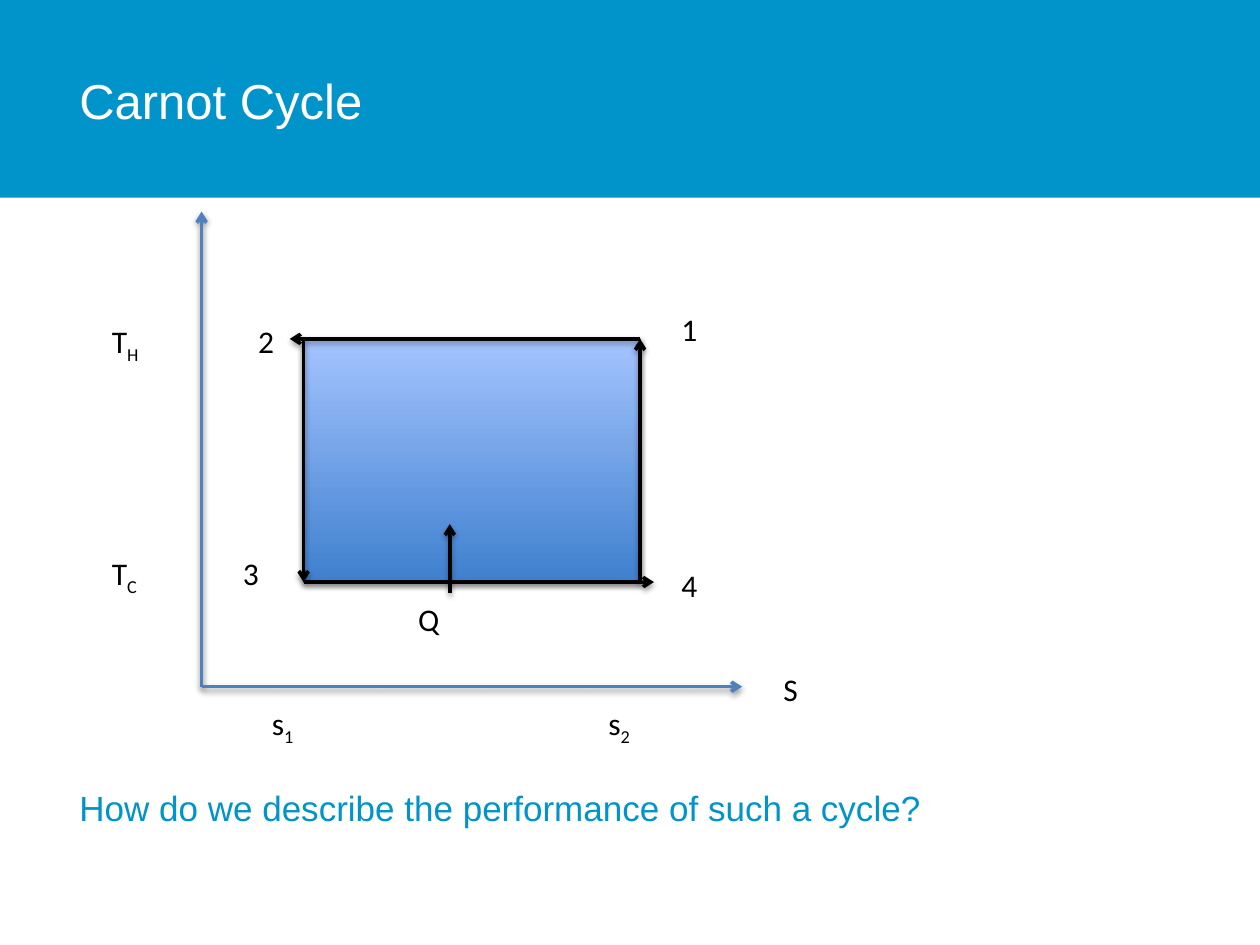
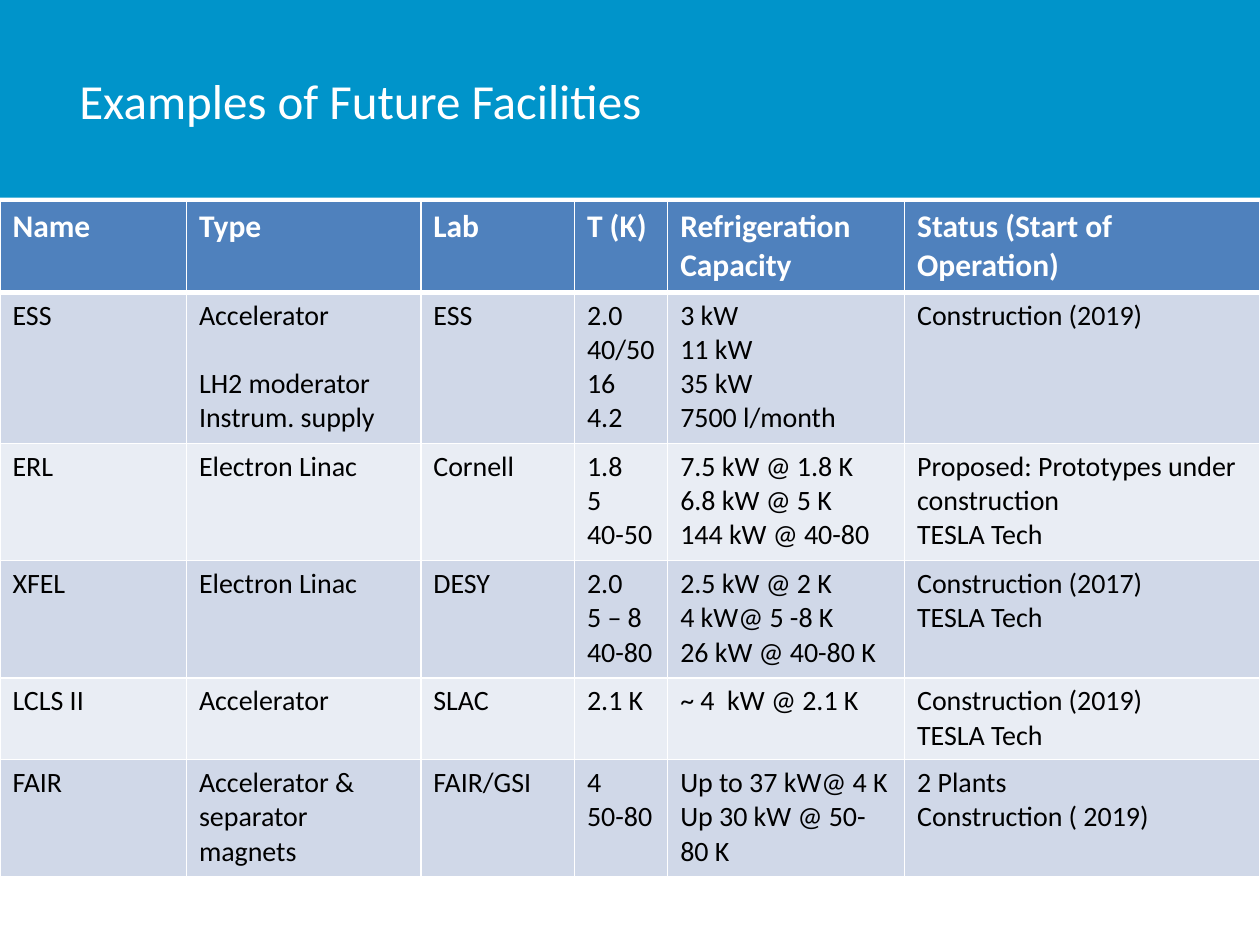
"""Build two slides: the Carnot cycle and a table of future facilities."""
from lxml.etree import SubElement
from pptx import Presentation
from pptx.dml.color import RGBColor
from pptx.enum.shapes import MSO_CONNECTOR, MSO_SHAPE
from pptx.enum.text import MSO_ANCHOR, MSO_AUTO_SIZE, PP_ALIGN
from pptx.oxml.ns import qn
from pptx.util import Inches, Pt

BLUE, STEEL, WHITE, BLACK = "0094CA", "4F81BD", "FFFFFF", "000000"
BANDS = ["E9EDF4", "D0D8E8"]
BARE = dict(margin_left=0, margin_right=0, margin_top=0, margin_bottom=0,
            word_wrap=True, auto_size=MSO_AUTO_SIZE.NONE)


def paint(fill, tone):
    """Fill with one solid colour."""
    fill.solid()
    fill.fore_color.rgb = RGBColor.from_string(tone)


def write(frame, text, tone, **style):
    """Write lines of text; an underscore starts a subscript."""
    for num, line in enumerate(text.split("\n")):
        para = frame.add_paragraph() if num else frame.paragraphs[0]
        para.alignment = PP_ALIGN.LEFT
        base, _, sub = line.partition("_")
        for part in filter(None, (base, sub)):
            run = para.add_run()
            run.text = part
            for key, val in style.items():
                setattr(run.font, key, val)
            paint(run.font.fill, tone)
        if sub:
            run.font._element.set("baseline", "-25000")


deck = Presentation()
deck.slide_width, deck.slide_height = Inches(10), Inches(7.5)
plan = deck.slide_layouts[5]
slides = []
for text, face in [("Carnot Cycle", "Arial"), ("Examples of Future Facilities", "Calibri")]:
    slide = deck.slides.add_slide(plan)
    title = slide.shapes.title
    title.left, title.top, title.width, title.height = map(Inches, (0.63, 0, 6.64, 1.58))
    for key, val in (BARE | dict(vertical_anchor=MSO_ANCHOR.MIDDLE)).items():
        setattr(title.text_frame, key, val)
    write(title.text_frame, text, WHITE, name=face, size=Pt(28))
    slides.append(slide)
cycle, sites = slides

band = cycle.shapes.add_shape(MSO_SHAPE.RECTANGLE, 0, 0, Inches(10), Inches(1.57))
band.shadow.inherit = False
paint(band.fill, BLUE)
band.line.fill.background()
plan.shapes.element.insert(2, band.element)

ask = cycle.shapes.add_textbox(*map(Inches, (0.63, 6.24, 8.54, 0.53))).text_frame
for key, val in BARE.items():
    setattr(ask, key, val)
write(ask, "How do we describe the performance of such a cycle?", BLUE, name="Arial", size=Pt(20))
ask.paragraphs[0].line_spacing = Pt(24)
ask.paragraphs[0].space_after = Pt(12)

left, right, top, base = 2.41, 5.08, 2.69, 4.62
work = cycle.shapes.add_shape(MSO_SHAPE.RECTANGLE,
                              *map(Inches, (left, top, right - left, base - top)))
work.fill.gradient()
work.fill.gradient_angle = 90
for stop, tone in zip(work.fill.gradient_stops, ("3F80CE", "A4C4FF")):
    stop.color.rgb = RGBColor.from_string(tone)
paint(work.line.fill, "4B7EBC")
work.line.width = Pt(0.75)

cast = [work]
for tone, *ends in [
    (STEEL, 1.6, 5.45, 1.6, 1.68),
    (STEEL, 1.6, 5.45, 5.89, 5.45),
    (BLACK, right, top, 2.3, top),
    (BLACK, left, top, left, base),
    (BLACK, left, base, 5.19, base),
    (BLACK, right, base, right, top),
    (BLACK, 3.57, 4.71, 3.57, 4.16),
]:
    arrow = cycle.shapes.add_connector(MSO_CONNECTOR.STRAIGHT, *map(Inches, ends))
    paint(arrow.line.fill, tone)
    arrow.line.width = Pt(2)
    SubElement(arrow.line._get_or_add_ln(), qn("a:tailEnd"), type="arrow")
    cast.append(arrow)

for shape in cast:
    glow = SubElement(shape.element.spPr, qn("a:effectLst"))
    shade = SubElement(glow, qn("a:outerShdw"), blurRad="40000", dist="20000",
                       dir="5400000", rotWithShape="0")
    ink = SubElement(shade, qn("a:srgbClr"), val=BLACK)
    SubElement(ink, qn("a:alpha"), val="38000")

for text, x, y in [
    ("S", 6.12, 5.27), ("1", 5.31, 2.41), ("2", 1.95, 2.51), ("3", 1.83, 4.35),
    ("4", 5.31, 4.44), ("T_H", 0.79, 2.51), ("T_C", 0.79, 4.35),
    ("Q", 3.22, 4.71), ("s_1", 2.06, 5.54), ("s_2", 4.73, 5.54),
]:
    label = cycle.shapes.add_textbox(*map(Inches, (x, y, 0.6, 0.45))).text_frame
    label.word_wrap = True
    write(label, text, BLACK, name="Calibri", size=Pt(18))

rows = [
    ["Name", "Type", "Lab", "T (K)", "Refrigeration Capacity", "Status (Start of Operation)"],
    ["ESS", "Accelerator\nLH2 moderator\nInstrum. supply", "ESS", "2.0\n40/50\n16\n4.2",
     "3 kW\n11 kW\n35 kW\n7500 l/month", "Construction (2019)"],
    ["ERL", "Electron Linac", "Cornell", "1.8\n5\n40-50",
     "7.5 kW @ 1.8 K\n6.8 kW @ 5 K\n144 kW @ 40-80",
     "Proposed: Prototypes under construction\nTESLA Tech"],
    ["XFEL", "Electron Linac", "DESY", "2.0\n5 – 8\n40-80",
     "2.5 kW @ 2 K\n4 kW@ 5 -8 K\n26 kW @ 40-80 K", "Construction (2017)\nTESLA Tech"],
    ["LCLS II", "Accelerator", "SLAC", "2.1 K", "~ 4  kW @ 2.1 K",
     "Construction (2019)\nTESLA Tech"],
    ["FAIR", "Accelerator & separator magnets", "FAIR/GSI", "4\n50-80",
     "Up to 37 kW@ 4 K\nUp 30 kW @ 50- 80 K", "2 Plants\nConstruction ( 2019)"],
]
grid = sites.shapes.add_table(6, 6, *map(Inches, (0, 1.6, 10, 5.36))).table
for col, wide in zip(grid.columns, (1.48, 1.86, 1.22, 0.74, 1.88, 2.82)):
    col.width = Inches(wide)
for row, high in zip(grid.rows, (0.72, 1.2, 0.93, 0.93, 0.65, 0.93)):
    row.height = Inches(high)
for r, row in enumerate(rows):
    head = r == 0
    for c, text in enumerate(row):
        cell = grid.cell(r, c)
        for side in "LRTB":
            thick = (r, side) in [(0, "B"), (1, "T")]
            edge = SubElement(cell._tc.get_or_add_tcPr(), qn("a:ln" + side),
                              w=str(Pt(3 if thick else 1)))
            SubElement(SubElement(edge, qn("a:solidFill")), qn("a:srgbClr"), val=WHITE)
        paint(cell.fill, STEEL if head else BANDS[r % 2])
        write(cell.text_frame, text, WHITE if head else BLACK, name="Calibri",
              size=Pt(18 if head else 16), bold=head)
grid.cell(1, 1).text_frame.paragraphs[1].space_before = Pt(19.5)

deck.save("out.pptx")
